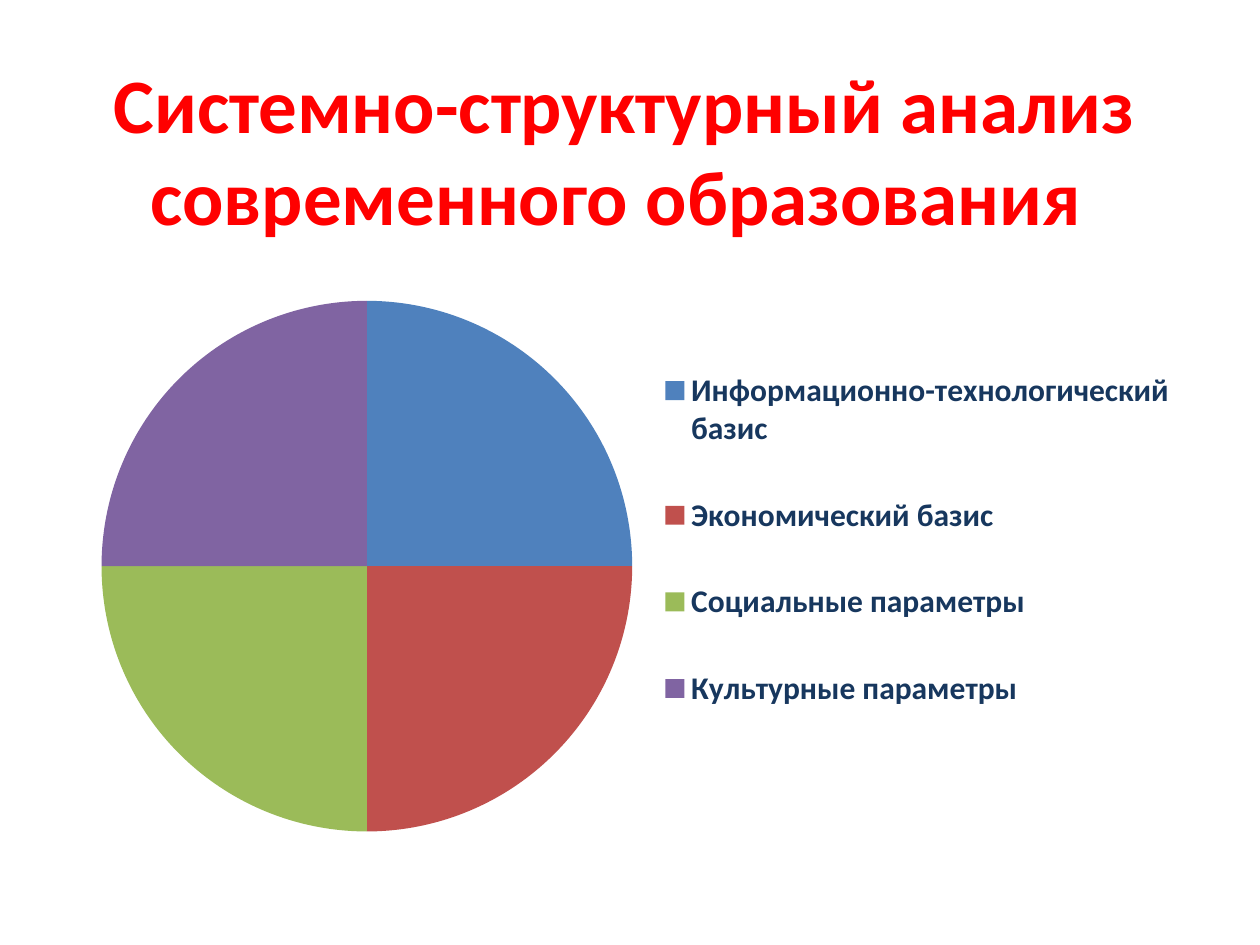
from pptx import Presentation
from pptx.chart.data import CategoryChartData
from pptx.dml.color import RGBColor
from pptx.enum.chart import XL_CHART_TYPE as Chart, XL_LEGEND_POSITION as Legend
from pptx.enum.text import MSO_ANCHOR as Anchor, PP_ALIGN as Align
from pptx.oxml import parse_xml
from pptx.oxml.ns import nsdecls
from pptx.util import Pt

PX = 914400 // 126
FONT = "Calibri"
COLORS = {
    "title": "FF0000", "legend": "17375E", "blue": "4F81BD",
    "red": "C0504D", "green": "9BBB59", "purple": "8064A2",
}
SECTORS = [
    ("Информационно-технологический базис", 25, "blue"),
    ("Экономический базис", 25, "red"),
    ("Социальные параметры", 25, "green"),
    ("Культурные параметры", 25, "purple"),
]


def rgb(name):
    return RGBColor.from_string(COLORS[name])


def layout_xml(box, frame, inner=False):
    """Manual chart layout for a box, as fractions of the chart frame."""
    left, top, width, height = frame
    x, y, w, h = box
    parts = {
        "xMode": "edge", "yMode": "edge",
        "x": round((x - left) / width, 3), "y": round((y - top) / height, 3),
        "w": round(w / width, 3), "h": round(h / height, 3),
    }
    if inner:
        parts = {"layoutTarget": "inner", **parts}
    body = "".join(f'<c:{tag} val="{val}"/>' for tag, val in parts.items())
    return parse_xml(f'<c:layout {nsdecls("c")}><c:manualLayout>{body}'
                     "</c:manualLayout></c:layout>")


class Deck:
    def __init__(self, width, height):
        self.prs = Presentation()
        self.prs.slide_width, self.prs.slide_height = width * PX, height * PX
        self.s = self.prs.slides.add_slide(self.prs.slide_layouts[5])

    def style(self, font, color, size):
        for key, val in {"name": FONT, "size": Pt(size), "bold": True}.items():
            setattr(font, key, val)
        font.color.rgb = rgb(color)

    def title(self, text, box):
        sp = self.s.shapes.title
        for key, val in zip(("left", "top", "width", "height"), box):
            setattr(sp, key, val * PX)
        tf = sp.text_frame
        tf.word_wrap, tf.vertical_anchor = True, Anchor.MIDDLE
        p = tf.paragraphs[0]
        p.alignment = Align.CENTER
        r = p.add_run()
        r.text = text
        self.style(r.font, "title", 44)

    def pie(self, sectors, frame, plot_box, legend_box):
        names, values, colors = zip(*sectors)
        data = CategoryChartData()
        data.categories = names
        data.add_series("Series 1", values)
        chart = self.s.shapes.add_chart(
            Chart.PIE, *(n * PX for n in frame), data).chart
        chart.has_title = False
        chart.font.name, chart.font.size = FONT, Pt(18)
        plot = chart.plots[0]
        plot.vary_by_categories = True
        for i, color in enumerate(colors):
            fmt = plot.series[0].points[i].format
            fmt.fill.solid()
            fmt.fill.fore_color.rgb = rgb(color)
            fmt.line.fill.background()
        chart.has_legend = True
        legend = chart.legend
        legend.position, legend.include_in_layout = Legend.RIGHT, False
        self.style(legend.font, "legend", 18)
        area = chart._chartSpace.chart.plotArea
        for parent, index, layout in (
            (area, 0, layout_xml(plot_box, frame, inner=True)),
            (legend._element, 1, layout_xml(legend_box, frame)),
        ):
            for old in parent.findall(layout.tag):
                parent.remove(old)
            parent.insert(index, layout)


def main():
    deck = Deck(1260, 945)
    deck.title("Системно-структурный анализ современного образования ",
               (54, 45, 1142, 208))
    deck.pie(SECTORS, frame=(84, 275, 1101, 586),
             plot_box=(102, 301, 531, 531), legend_box=(655, 323, 524, 433))
    deck.prs.save("out.pptx")


if __name__ == "__main__":
    main()
